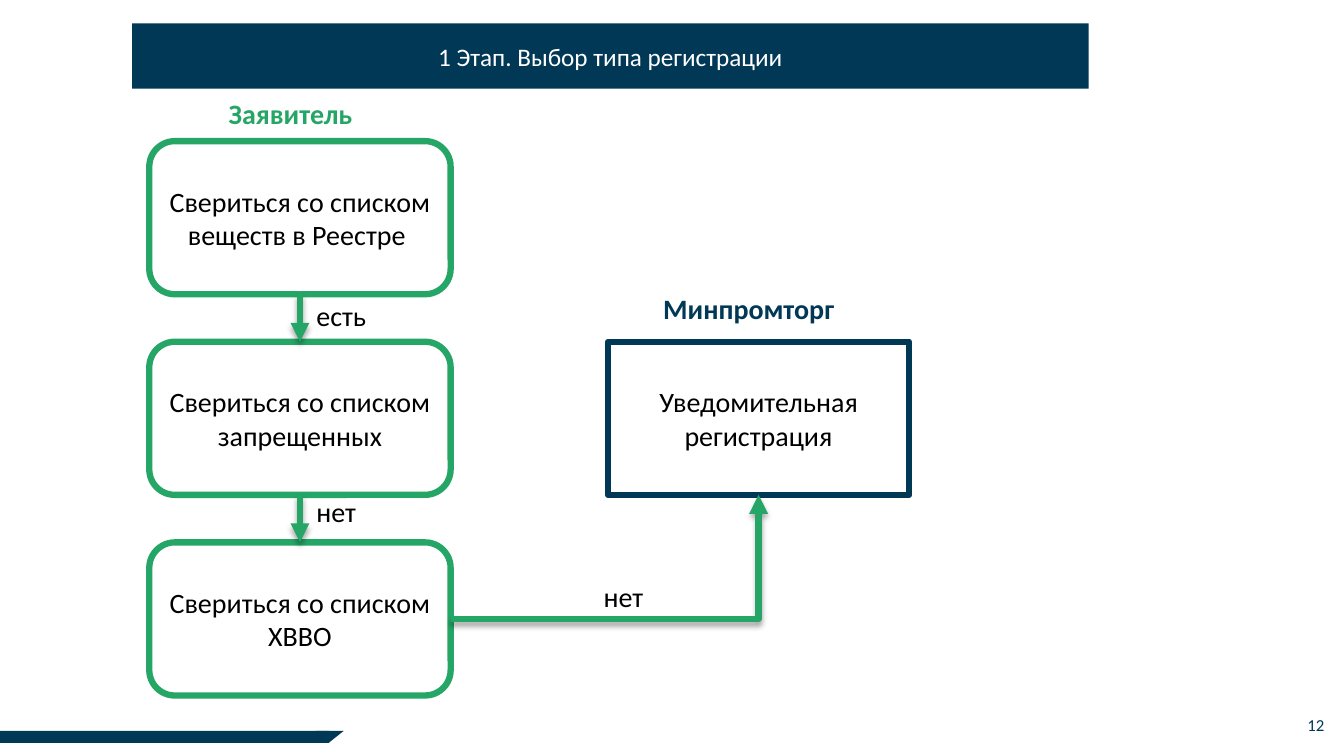
from lxml import etree
from pptx import Presentation
from pptx.dml.color import RGBColor
from pptx.enum.shapes import MSO_CONNECTOR, MSO_SHAPE
from pptx.enum.text import MSO_ANCHOR, MSO_AUTO_SIZE, PP_ALIGN
from pptx.oxml import parse_xml
from pptx.oxml.ns import nsdecls, qn
from pptx.util import Pt

NAVY = RGBColor(0x01, 0x38, 0x56)
GREEN = RGBColor(0x25, 0xA6, 0x66)
WHITE = RGBColor(0xFF, 0xFF, 0xFF)
BLACK = RGBColor(0, 0, 0)

RECT = MSO_SHAPE.RECTANGLE
ROUND = MSO_SHAPE.ROUNDED_RECTANGLE
TRIANGLE = MSO_SHAPE.ISOSCELES_TRIANGLE
STRAIGHT = MSO_CONNECTOR.STRAIGHT
ELBOW = MSO_CONNECTOR.ELBOW
MIDDLE = MSO_ANCHOR.MIDDLE
FIT = MSO_AUTO_SIZE.SHAPE_TO_FIT_TEXT
LEFT, CENTER, RIGHT = PP_ALIGN.LEFT, PP_ALIGN.CENTER, PP_ALIGN.RIGHT
BOTTOM_SITE, RIGHT_SITE, TOP_SITE = 2, 3, 0

BOX_W, BOX_H = 215.3, 109.4
STEP_X, STEP_Y, PITCH = 106.6, 100.8, 143.3

SHADOW = (
    f'<a:effectLst {nsdecls("a")}>'
    '<a:outerShdw blurRad="50800" dist="38100" dir="5400000" rotWithShape="0">'
    '<a:srgbClr val="000000"><a:alpha val="35000"/></a:srgbClr>'
    '</a:outerShdw></a:effectLst>'
)


class Deck:
    def __init__(self, slide, font="Calibri", stroke=4.5):
        self.slide = slide
        self.font = font
        self.stroke = Pt(stroke)

    def fill_text(self, frame, text, size, color, align, bold=False):
        frame.text = text
        para = frame.paragraphs[0]
        para.alignment = align
        font = para.runs[0].font
        font.name, font.size, font.bold = self.font, Pt(size), bold
        font.color.rgb = color

    def shape(self, kind, x, y, w, h, fill, line=None):
        item = self.slide.shapes.add_shape(kind, Pt(x), Pt(y), Pt(w), Pt(h))
        item.shadow.inherit = False
        item.fill.solid()
        item.fill.fore_color.rgb = fill
        if line is None:
            item.line.fill.background()
        else:
            item.line.color.rgb = line
            item.line.width = self.stroke
        return item

    def box(self, kind, x, y, w, h, text, fill=WHITE, line=None, size=20, color=BLACK):
        item = self.shape(kind, x, y, w, h, fill, line)
        frame = item.text_frame
        frame.word_wrap = True
        frame.vertical_anchor = MIDDLE
        self.fill_text(frame, text, size, color, CENTER)
        return item

    def label(self, x, y, w, h, text, size=20, color=BLACK, align=LEFT,
              bold=False, wrap=True, grow=True):
        item = self.slide.shapes.add_textbox(Pt(x), Pt(y), Pt(w), Pt(h))
        frame = item.text_frame
        frame.word_wrap = wrap
        if grow:
            frame.auto_size = FIT
        self.fill_text(frame, text, size, color, align, bold)

    def arrow(self, kind, start, start_site, end, end_site):
        """Join the given connection sites of two boxes."""
        x1, y1 = self.site(start, start_site)
        x2, y2 = self.site(end, end_site)
        item = self.slide.shapes.add_connector(kind, x1, y1, x2, y2)
        item.begin_connect(start, start_site)
        item.end_connect(end, end_site)
        item.line.color.rgb = GREEN
        item.line.width = self.stroke
        props = item.element.spPr
        if kind == ELBOW:
            props.find(qn("a:prstGeom")).set("prst", "bentConnector2")
        etree.SubElement(props.find(qn("a:ln")), qn("a:tailEnd"), type="triangle")
        props.append(parse_xml(SHADOW))

    @staticmethod
    def site(box, index):
        mid_x, mid_y = box.left + box.width // 2, box.top + box.height // 2
        return {
            TOP_SITE: (mid_x, box.top),
            BOTTOM_SITE: (mid_x, box.top + box.height),
            RIGHT_SITE: (box.left + box.width, mid_y),
        }[index]


def main():
    prs = Presentation()
    prs.slide_width, prs.slide_height = Pt(960), Pt(540)
    deck = Deck(prs.slides.add_slide(prs.slide_layouts[6]))

    corner = deck.shape(TRIANGLE, 225.4, 522, 20.2, 8, NAVY)
    corner.rotation = 180
    deck.shape(RECT, 0, 522, 235.4, 8.6, NAVY)
    deck.box(RECT, 94.3, 16.6, 683.3, 46.8, "1 Этап. Выбор типа регистрации",
             fill=NAVY, size=18, color=WHITE)

    checks = ("веществ в Реестре ", "запрещенных", "ХВВО")
    steps = [
        deck.box(ROUND, STEP_X, STEP_Y + i * PITCH, BOX_W, BOX_H,
                 f"Свериться со списком {check}", line=GREEN)
        for i, check in enumerate(checks)
    ]
    notice = deck.box(RECT, 434.2, STEP_Y + PITCH, BOX_W, BOX_H,
                      "Уведомительная регистрация", line=NAVY)

    for upper, lower in zip(steps, steps[1:]):
        deck.arrow(STRAIGHT, upper, BOTTOM_SITE, lower, TOP_SITE)
    deck.arrow(ELBOW, steps[-1], RIGHT_SITE, notice, BOTTOM_SITE)

    deck.label(218.9, 209.5, 76.3, 31.5, "есть")
    deck.label(218.9, 350, 49, 31.5, "нет")
    deck.label(424.1, 410.4, 56.9, 31.5, "нет")
    deck.label(466.6, 204.5, 149.8, 31.5, "Минпромторг", color=NAVY, bold=True, wrap=False)
    deck.label(156.2, 65.5, 115.9, 31.5, "Заявитель", color=GREEN, bold=True, wrap=False)
    deck.label(869, 506.9, 84.2, 28.8, "12", size=12, color=NAVY, align=RIGHT, grow=False)

    prs.save("out.pptx")


if __name__ == "__main__":
    main()
